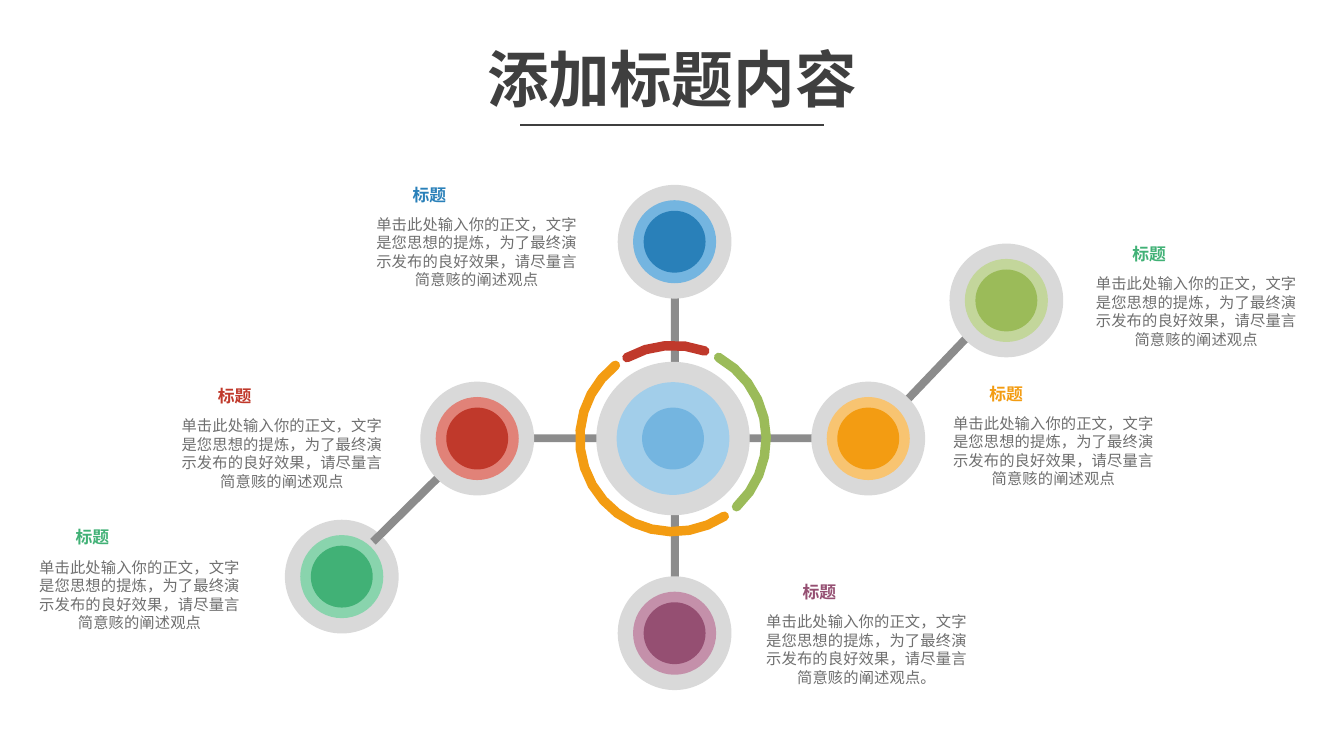
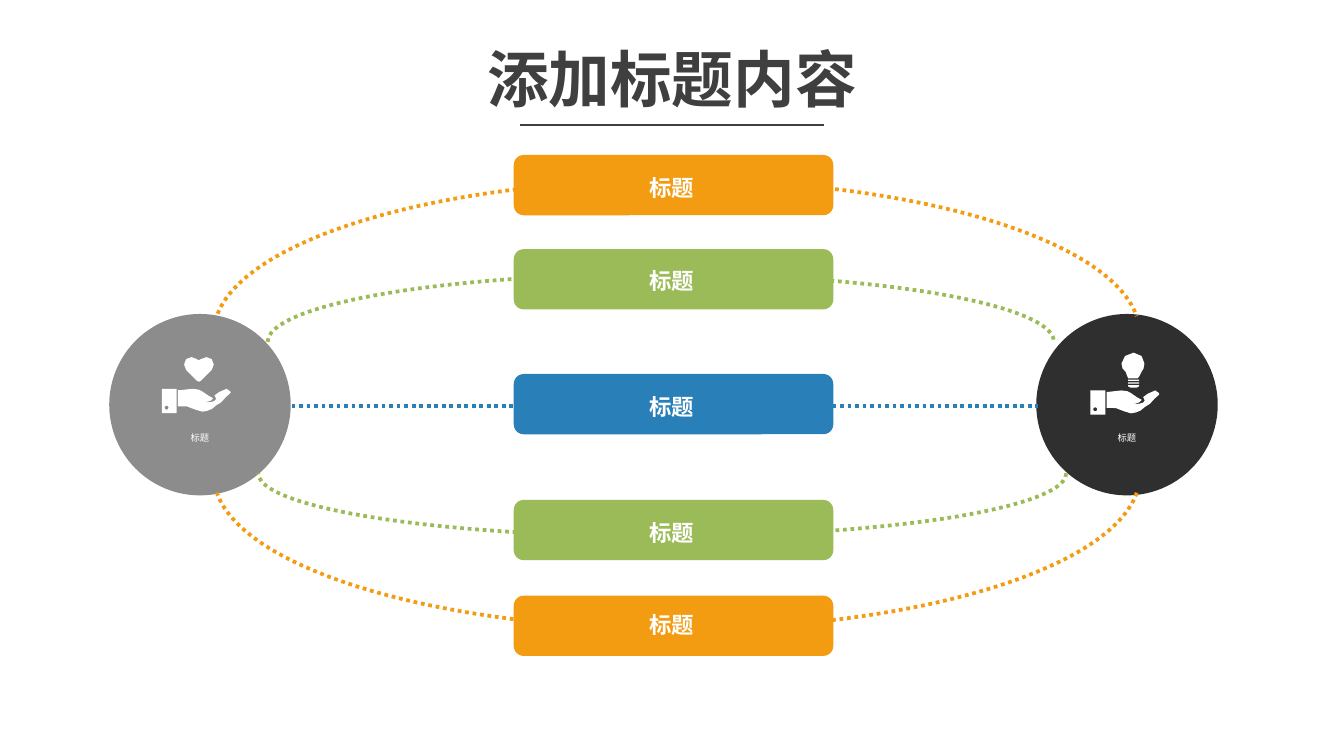
import math

import lxml.etree
import pptx
import pptx.dml.color
import pptx.enum.dml
import pptx.enum.shapes
import pptx.enum.text
import pptx.oxml.ns
import pptx.util

Cm = pptx.util.Cm
SHAPES = pptx.enum.shapes.MSO_SHAPE

# Shared look; all lengths are in centimetres
FONT = "Arial"
WHITE, INK, BODY_GREY = "FFFFFF", "3F3F3F", "6F6F6F"
DISC_GREY, BAR_GREY, CHARCOAL = "D9D9D9", "8C8C8C", "2F2F2F"
BLUE, SKY, PALE_SKY = "2980B9", "74B5E0", "A2CEEA"
GREEN, MINT = "41B176", "89D4AD"
OLIVE, PALE_OLIVE = "9BBB59", "C3D69B"
ORANGE, PALE_ORANGE = "F39C12", "F8C471"
RED, PALE_RED = "C0392B", "E18278"
PLUM, PALE_PLUM = "954F72", "C490AA"

TITLE = "添加标题内容"
HEADING = "标题"
BODY = "单击此处输入你的正文，文字是您思想的提炼，为了最终演示发布的良好效果，请尽量言简意赅的阐述观点"

# Slide 1: centre, ring colour, core colour
NODES = [
    ((6.46, 10.9), MINT, GREEN),
    ((9.02, 8.29), PALE_RED, RED),
    ((16.41, 8.29), PALE_ORANGE, ORANGE),
    ((19.02, 5.68), PALE_OLIVE, OLIVE),
    ((12.75, 11.97), PALE_PLUM, PLUM),
    ((12.75, 4.57), SKY, BLUE),
]
DISC, RING, CORE = 2.15, 1.57, 1.17
HUB = (12.72, 8.29)
HUB_DISC, HUB_RING = 2.9, 2.13
# Left, top, width, height
BARS = [(9.8, 8.21, 5.82, 0.15), (12.68, 5.36, 0.15, 5.82)]
DIAGONAL_WIDTH = 0.15
DIAGONALS = [((7.05, 10.24), (8.41, 8.9)), ((18.38, 6.27), (17.04, 7.67))]
# Start and end angle, clockwise from east
SWEEPS = [(240.4, 289.9, RED), (299.3, 407, OLIVE), (56.6, 231.8, ORANGE)]
SWEEP_RADIUS, SWEEP_WIDTH = 1.76, 0.18
NOTES = [
    ((3.87, 7.17), RED, BODY),
    ((1.18, 9.84), GREEN, BODY),
    ((14.92, 10.87), PLUM, BODY + "。"),
    ((7.55, 3.36), BLUE, BODY),
    ((18.45, 7.12), ORANGE, BODY),
    ((21.15, 4.48), GREEN, BODY),
]

# Slide 2: button top, label top, colour
BUTTONS = [
    (2.93, 3.16, ORANGE),
    (4.71, 4.93, OLIVE),
    (7.07, 7.3, BLUE),
    (9.45, 9.68, OLIVE),
    (11.26, 11.43, ORANGE),
]
# Box, rotation, start and end angle, colour
ARCS = [
    ((5.06, 5.18, 14.86, 2.57), 0, 180, 0, OLIVE),
    ((4.04, 3.4, 17.5, 5.82), 0, 182.5, 357.8, ORANGE),
    ((4.04, 6.07, 17.5, 5.82), 180, 182.2, 357.8, ORANGE),
    ((4.88, 7.75, 15.27, 2.39), 180, 180, 0, OLIVE),
]

# Icon outlines on a grid that starts at the cuff: pairs are corners,
# sixes are Bezier curves (two controls and an end)
ICON_UNIT = 1.3 / 51
CUFF = [(0, 0), (11, 0), (11, 18), (0, 18)]
HAND = [
    (48, 0), (45, 0, 39, 5, 39, 5), (39, 5, 40, 6, 40, 7), (41, 7, 40, 8, 39, 9),
    (38, 9, 35, 11, 33, 10), (30, 10, 26, 7, 26, 7), (26, 7, 30, 9, 32, 10),
    (34, 10, 39, 8, 38, 7), (37, 6, 33, 5, 30, 2), (29, 1, 26, 0, 23, 0),
    (21, 0, 16, 1, 14, 1), (12, 1), (12, 13), (16, 13), (18, 13, 20, 13, 21, 14),
    (22, 14, 28, 17, 30, 17), (32, 17, 35, 16, 37, 15), (39, 13, 42, 11, 44, 10),
    (45, 8, 50, 4, 51, 3), (52, 3, 50, 1, 48, 0),
]
HEART = [
    (18, -14), (16, -16, 16, -20, 18, -22), (20, -24, 24, -24, 26, -22), (27, -21),
    (29, -22), (31, -24, 35, -24, 37, -22), (39, -20, 39, -16, 37, -14), (29, -6),
    (28, -5, 27, -5, 26, -6),
]
BULB = [
    (28, -9), (35, -9), (37, -9, 35, -11, 38, -14), (39, -15, 40, -17, 40, -20),
    (40, -24, 37, -28, 32, -28), (27, -28, 23, -24, 23, -20),
    (23, -17, 24, -15, 26, -14), (28, -11, 27, -9, 28, -9),
]
THREADS = [[(28, y), (36, y), (36, y + 1), (28, y + 1)] for y in (-8, -6)]
BULB_BASE = [(28, -4), (36, -4), (36, -3), (34, -2), (30, -2), (28, -3)]

# Circle centre, colour, icon origin, icon outlines
HOLDERS = [
    ((3.78, 7.65), BAR_GREY, (3.06, 7.35), [HEART]),
    ((21.3, 7.65), CHARCOAL, (20.61, 7.38), [BULB, *THREADS, BULB_BASE]),
]
HOLDER_SIZE = 3.43


def color(hex_string):
    return pptx.dml.color.RGBColor.from_string(hex_string)


def paint(shape, fill):
    shape.shadow.inherit = False
    shape.fill.solid()
    shape.fill.fore_color.rgb = color(fill)
    shape.line.fill.background()


def add_filled(slide, kind, box, fill):
    paint(slide.shapes.add_shape(kind, *map(Cm, box)), fill)


def add_circle(slide, center, diameter, fill):
    left, top = (value - diameter / 2 for value in center)
    add_filled(slide, SHAPES.OVAL, (left, top, diameter, diameter), fill)


def add_outline(slide, contours, fill):
    """Add one freeform made of closed contours of points."""
    contours = [[(Cm(x), Cm(y)) for x, y in contour] for contour in contours]
    builder = slide.shapes.build_freeform(*contours[0][0], scale=1.0)
    for number, contour in enumerate(contours):
        if number:
            builder.move_to(*contour[0])
        builder.add_line_segments(contour[1:], close=True)
    paint(builder.convert_to_shape(), fill)


def add_line(slide, start, end, line_color, width, dash=None):
    line = slide.shapes.add_connector(
        pptx.enum.shapes.MSO_CONNECTOR.STRAIGHT, *map(Cm, start + end))
    style_line(line.line, line_color, width, dash)
    lxml.etree.SubElement(line._element.spPr, pptx.oxml.ns.qn("a:effectLst"))


def style_line(line, line_color, width, dash=None):
    line.color.rgb = color(line_color)
    line.width = pptx.util.Pt(width)
    if dash:
        line.dash_style = dash


def add_text(slide, box, text, size, text_color, bold=False, centered=True, wrap=True):
    text_box = slide.shapes.add_textbox(*map(Cm, box))
    frame = text_box.text_frame
    frame.word_wrap = wrap
    paragraph = frame.paragraphs[0]
    paragraph.text = text
    if centered:
        paragraph.alignment = pptx.enum.text.PP_ALIGN.CENTER
    font = paragraph.font
    font.name, font.size, font.bold = FONT, pptx.util.Pt(size), bold
    font.color.rgb = color(text_color)
    return frame


def add_titled_slide(presentation):
    slide = presentation.slides.add_slide(presentation.slide_layouts[6])
    add_line(slide, (9.83, 2.36), (15.57, 2.36), INK, 1)
    frame = add_text(slide, (1.75, 0.76, 21.9, 1.6), TITLE, 33, INK, bold=True)
    frame.vertical_anchor = pptx.enum.text.MSO_ANCHOR.MIDDLE
    frame.paragraphs[0].line_spacing = 0.9
    return slide


def polar(center, radius, degrees):
    angle = math.radians(degrees)
    return center[0] + radius * math.cos(angle), center[1] + radius * math.sin(angle)


def arc_points(center, radius, start, end, steps):
    return [polar(center, radius, start + (end - start) * step / steps)
            for step in range(steps + 1)]


def sweep_contour(start, end):
    """Outline a ring segment around the hub with rounded ends."""
    half = SWEEP_WIDTH / 2
    steps = round((end - start) / 12)
    tail, head = (polar(HUB, SWEEP_RADIUS, angle) for angle in (start, end))
    return (arc_points(HUB, SWEEP_RADIUS + half, start, end, steps)
            + arc_points(head, half, end, end + 180, 4)[1:-1]
            + arc_points(HUB, SWEEP_RADIUS - half, end, start, steps)
            + arc_points(tail, half, start + 180, start + 360, 4)[1:-1])


def bar_contour(start, end):
    """Outline a straight bar between two points."""
    (x1, y1), (x2, y2) = start, end
    scale = DIAGONAL_WIDTH / 2 / math.dist(start, end)
    dx, dy = (y1 - y2) * scale, (x2 - x1) * scale
    return [(x1 + dx, y1 + dy), (x2 + dx, y2 + dy), (x2 - dx, y2 - dy), (x1 - dx, y1 - dy)]


def flatten(outline, steps=2):
    """Turn corners and Bezier curves into plain points."""
    points = []
    for part in outline:
        if len(part) == 2:
            points.append(part)
            continue
        knots = [points[-1], part[:2], part[2:4], part[4:]]
        for step in range(1, steps + 1):
            t = step / steps
            weights = [math.comb(3, k) * t ** k * (1 - t) ** (3 - k) for k in range(4)]
            points.append(tuple(sum(w * knot[axis] for w, knot in zip(weights, knots))
                                for axis in (0, 1)))
    return points


def add_hand_icon(slide, origin, held):
    button = arc_points((3.5, 14), 1.5, 0, 315, 7)
    outlines = [*held, CUFF, button, HAND]
    add_outline(slide, [[(origin[0] + x * ICON_UNIT, origin[1] + y * ICON_UNIT)
                         for x, y in flatten(outline)] for outline in outlines], WHITE)


def build_network(presentation):
    slide = add_titled_slide(presentation)
    add_circle(slide, NODES[0][0], DISC, DISC_GREY)
    for box in BARS:
        add_filled(slide, SHAPES.RECTANGLE, box, BAR_GREY)
    for start, end in DIAGONALS:
        add_outline(slide, [bar_contour(start, end)], BAR_GREY)
    for center, _, _ in NODES[1:]:
        add_circle(slide, center, DISC, DISC_GREY)
    add_circle(slide, HUB, HUB_DISC, DISC_GREY)
    for (left, top), heading_color, body in NOTES:
        add_text(slide, (left, top, 1.14, 0.64), HEADING, 9, heading_color,
                 bold=True, centered=False, wrap=False)
        add_text(slide, (left - 0.71, top + 0.58, 4.34, 1.68), body, 8.25, BODY_GREY)
    for center, ring, core in NODES:
        add_circle(slide, center, RING, ring)
        add_circle(slide, center, CORE, core)
    add_circle(slide, HUB, HUB_RING, PALE_SKY)
    add_circle(slide, HUB, CORE, SKY)
    for start, end, fill in SWEEPS:
        add_outline(slide, [sweep_contour(start, end)], fill)


def build_exchange(presentation):
    slide = add_titled_slide(presentation)
    dots = pptx.enum.dml.MSO_LINE.ROUND_DOT
    for center, fill, _, _ in HOLDERS:
        add_circle(slide, center, HOLDER_SIZE, fill)
        add_text(slide, (center[0] - 1.38, 8.05, 2.76, 0.48), HEADING, 5, WHITE)
    for box, rotation, start, end, line_color in ARCS:
        arc = slide.shapes.add_shape(SHAPES.ARC, *map(Cm, box))
        arc.shadow.inherit = False
        arc.fill.background()
        arc.rotation = rotation
        # Arc adjustments count 0.6 for each degree
        arc.adjustments[0], arc.adjustments[1] = start * 0.6, end * 0.6
        style_line(arc.line, line_color, 2, dots)
    add_line(slide, (5.51, 7.67), (19.61, 7.67), BLUE, 2, dots)
    for top, label_top, fill in BUTTONS:
        add_filled(slide, SHAPES.ROUNDED_RECTANGLE, (9.71, top, 6.04, 1.14), fill)
        add_text(slide, (10.92, label_top, 3.56, 0.76), HEADING, 12, WHITE, bold=True)
    for _, _, origin, held in HOLDERS:
        add_hand_icon(slide, origin, held)


def main():
    presentation = pptx.Presentation()
    presentation.slide_width, presentation.slide_height = Cm(25.4), Cm(14.29)
    build_network(presentation)
    build_exchange(presentation)
    presentation.save("out.pptx")


if __name__ == "__main__":
    main()
